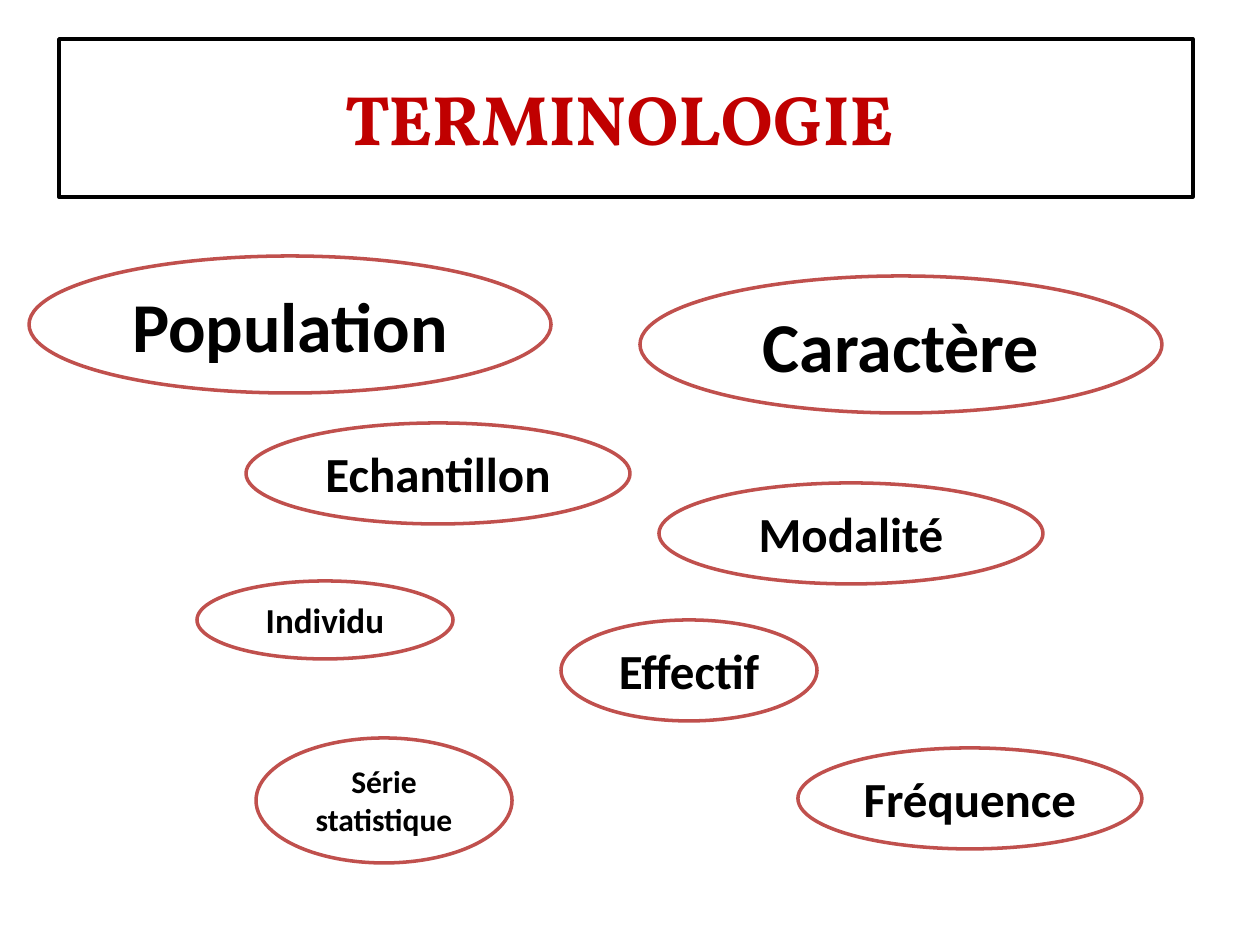
from dataclasses import dataclass

from pptx import Presentation
from pptx import util as u
from pptx.dml.color import RGBColor
from pptx.enum import shapes, text

PX = 914400 // 126


@dataclass(frozen=True)
class Theme:
    paper: str = "FFFFFF"
    ink: str = "000000"
    title: str = "C00000"
    outline: str = "C0504D"
    title_font: str = "Vollkorn"
    body_font: str = "Calibri"
    huge: int = 40
    large: int = 28
    medium: int = 20
    small: int = 18
    stroke: int = 2


THEME = Theme()
SLIDE_SIZE = (1260, 945)
TITLE = ("TERMINOLOGIE ", (59, 39, 1134, 158))
TERMS = [
    ("Population", THEME.huge, (29, 256, 522, 137)),
    ("Echantillon", THEME.large, (246, 423, 384, 101)),
    ("Fréquence", THEME.large, (798, 748, 344, 101)),
    ("Effectif", THEME.large, (561, 620, 256, 101)),
    ("Individu", THEME.medium, (197, 581, 256, 78)),
    ("Série statistique", THEME.small, (256, 738, 256, 125)),
    ("Caractère", THEME.huge, (640, 276, 522, 137)),
    ("Modalité", THEME.large, (659, 483, 384, 101)),
]


def color(code):
    return RGBColor.from_string(code)


def write(shape, words, *, size, font, ink, anchor, fit):
    frame = shape.text_frame
    frame.word_wrap = True
    frame.auto_size = fit
    frame.vertical_anchor = anchor
    para = frame.paragraphs[0]
    para.alignment = text.PP_ALIGN.CENTER
    span = para.add_run()
    span.text = words
    span.font.size = u.Pt(size)
    span.font.name = font
    span.font.bold = True
    span.font.color.rgb = color(ink)


def add_outlined(page, kind, area, outline):
    shape = page.shapes.add_shape(kind, *(side * PX for side in area))
    shape.shadow.inherit = False
    shape.fill.solid()
    shape.fill.fore_color.rgb = color(THEME.paper)
    shape.line.color.rgb = color(outline)
    shape.line.width = u.Pt(THEME.stroke)
    return shape


def main():
    deck = Presentation()
    deck.slide_width, deck.slide_height = (side * PX for side in SLIDE_SIZE)
    page = deck.slides.add_slide(deck.slide_layouts[6])

    words, area = TITLE
    box = add_outlined(page, shapes.MSO_SHAPE.RECTANGLE, area, THEME.ink)
    write(box, words, size=THEME.huge, font=THEME.title_font, ink=THEME.title,
          anchor=text.MSO_ANCHOR.MIDDLE, fit=text.MSO_AUTO_SIZE.NONE)

    for words, size, area in TERMS:
        bubble = add_outlined(page, shapes.MSO_SHAPE.FLOWCHART_CONNECTOR,
                              area, THEME.outline)
        write(bubble, words, size=size, font=THEME.body_font, ink=THEME.ink,
              anchor=text.MSO_ANCHOR.TOP,
              fit=text.MSO_AUTO_SIZE.SHAPE_TO_FIT_TEXT)

    deck.save("out.pptx")


if __name__ == "__main__":
    main()
